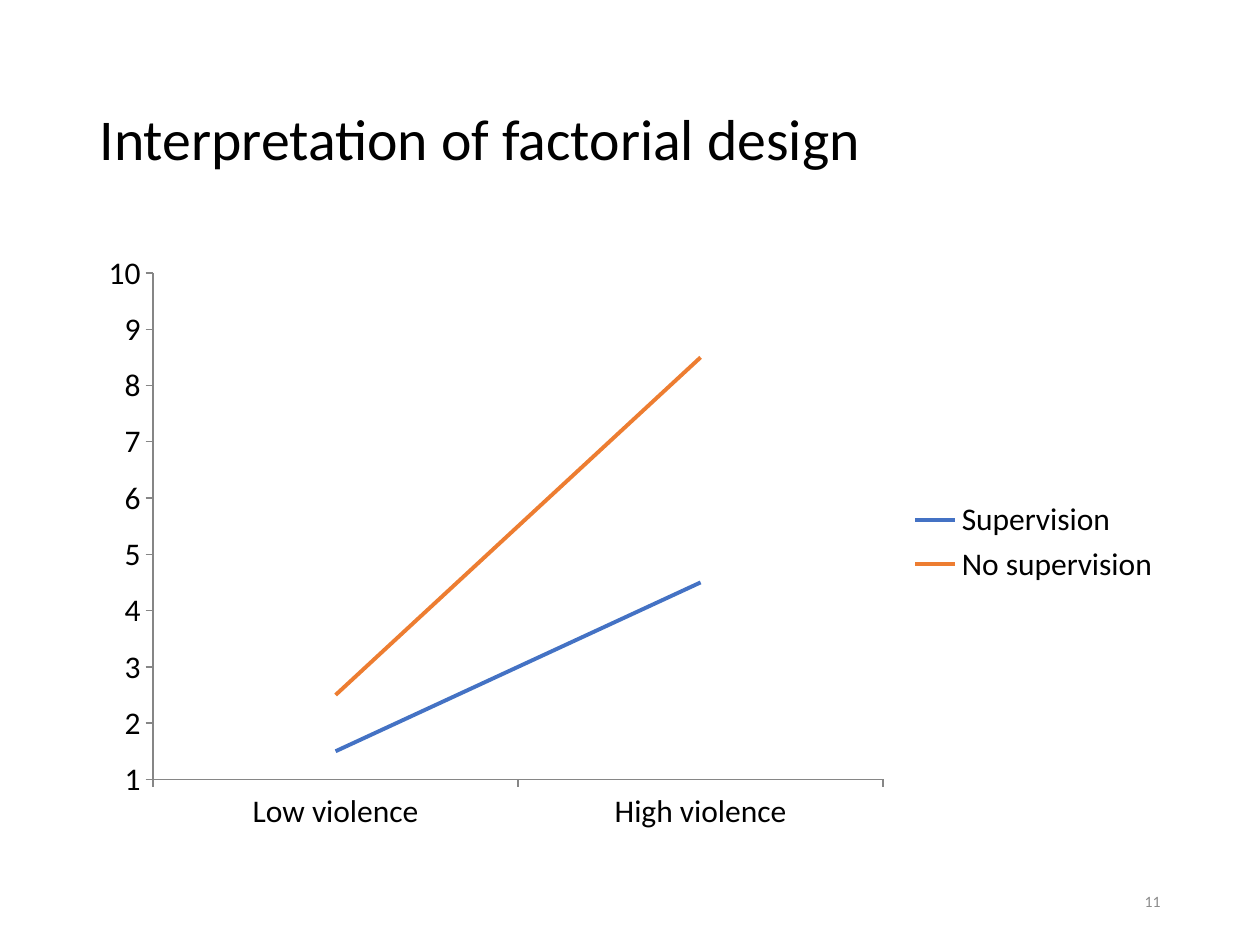
from dataclasses import dataclass

import pptx
import pptx.chart.data
import pptx.dml.color
import pptx.enum.chart
import pptx.enum.text
import pptx.util

EMU_PER_PX = 914400 // 126


@dataclass(frozen=True)
class Theme:
    font: str = "Calibri"
    ink: str = "000000"
    muted: str = "8C8C8C"
    axis: str = "868686"
    title_size: int = 33
    chart_size: int = 18
    number_size: int = 9


@dataclass(frozen=True)
class Box:
    left: int
    top: int
    width: int
    height: int

    def emu(self) -> list[int]:
        return [px * EMU_PER_PX for px in (self.left, self.top, self.width, self.height)]


@dataclass(frozen=True)
class Condition:
    name: str
    ratings: tuple[float, ...]
    color: str


THEME = Theme()
TITLE_BOX = Box(87, 50, 1086, 183)
CHART_BOX = Box(87, 242, 1086, 600)
NUMBER_BOX = Box(890, 876, 283, 50)
VIOLENCE_LEVELS = ("Low violence", "High violence")
CONDITIONS = (
    Condition("Supervision", (1.5, 4.5), "4472C4"),
    Condition("No supervision", (2.5, 8.5), "ED7D31"),
)


def rgb(value: str) -> pptx.dml.color.RGBColor:
    return pptx.dml.color.RGBColor.from_string(value)


def style_font(font, size: int, color: str) -> None:
    font.name = THEME.font
    font.size = pptx.util.Pt(size)
    font.color.rgb = rgb(color)


def write_line(shape, text: str, size: int, color: str, alignment) -> None:
    frame = shape.text_frame
    frame.text = text
    frame.word_wrap = True
    frame.vertical_anchor = pptx.enum.text.MSO_ANCHOR.MIDDLE
    line = frame.paragraphs[0]
    line.alignment = alignment
    style_font(line.runs[0].font, size, color)


def style_axis(axis) -> None:
    axis.has_major_gridlines = False
    axis.major_tick_mark = pptx.enum.chart.XL_TICK_MARK.OUTSIDE
    axis.minor_tick_mark = pptx.enum.chart.XL_TICK_MARK.NONE
    axis.format.line.color.rgb = rgb(THEME.axis)
    axis.format.line.width = pptx.util.Pt(0.75)


def draw_ratings(slide, box: Box, conditions: tuple[Condition, ...]) -> None:
    ratings = pptx.chart.data.CategoryChartData()
    ratings.categories = VIOLENCE_LEVELS
    for condition in conditions:
        ratings.add_series(condition.name, condition.ratings)
    chart = slide.shapes.add_chart(
        pptx.enum.chart.XL_CHART_TYPE.LINE, *box.emu(), ratings
    ).chart
    style_font(chart.font, THEME.chart_size, THEME.ink)
    chart.has_title = False
    chart.has_legend = True
    chart.legend.position = pptx.enum.chart.XL_LEGEND_POSITION.RIGHT
    chart.legend.include_in_layout = False

    style_axis(chart.category_axis)
    style_axis(chart.value_axis)
    chart.value_axis.minimum_scale = 1
    chart.value_axis.maximum_scale = 10
    chart.value_axis.major_unit = 1

    chart.plots[0].vary_by_categories = False
    for series, condition in zip(chart.plots[0].series, conditions):
        series.smooth = False
        series.marker.style = pptx.enum.chart.XL_MARKER_STYLE.NONE
        series.format.line.color.rgb = rgb(condition.color)
        series.format.line.width = pptx.util.Pt(2.25)


def main() -> None:
    deck = pptx.Presentation()
    deck.slide_width = pptx.util.Inches(10)
    deck.slide_height = pptx.util.Inches(7.5)
    slide = deck.slides.add_slide(deck.slide_layouts.get_by_name("Title Only"))

    title = slide.shapes.title
    title.left, title.top, title.width, title.height = TITLE_BOX.emu()
    write_line(title, "Interpretation of factorial design", THEME.title_size,
               THEME.ink, pptx.enum.text.PP_ALIGN.LEFT)
    title.text_frame.paragraphs[0].line_spacing = 0.9

    draw_ratings(slide, CHART_BOX, CONDITIONS)

    slide_number = slide.shapes.add_textbox(*NUMBER_BOX.emu())
    write_line(slide_number, "11", THEME.number_size, THEME.muted,
               pptx.enum.text.PP_ALIGN.RIGHT)
    deck.save("out.pptx")


if __name__ == "__main__":
    main()
